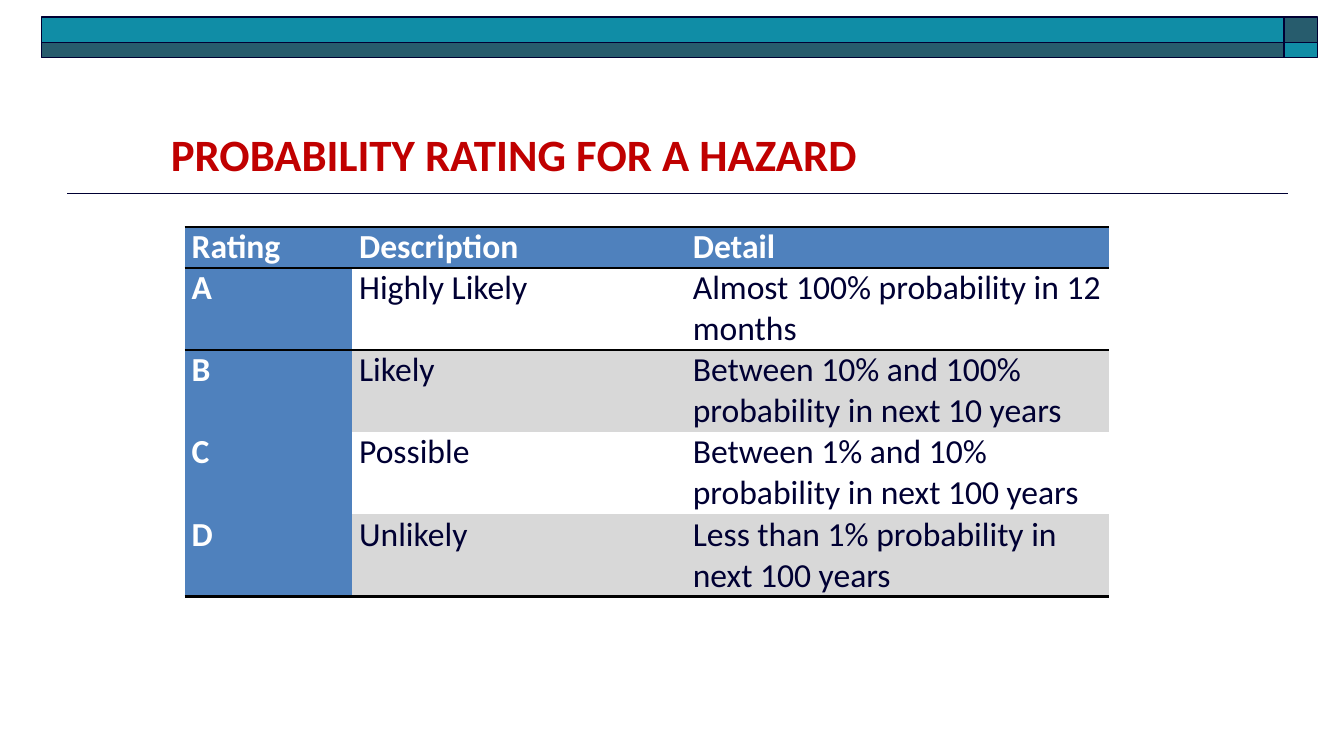
from lxml.etree import SubElement
from pptx import Presentation
from pptx.dml.color import RGBColor
from pptx.enum.shapes import MSO_CONNECTOR, MSO_SHAPE
from pptx.enum.text import MSO_ANCHOR, PP_ALIGN
from pptx.oxml.ns import qn
from pptx.util import Cm, Pt

NAVY = RGBColor(0x00, 0x00, 0x33)
TEAL = RGBColor(0x10, 0x8D, 0xA6)
DARK_TEAL = RGBColor(0x27, 0x5C, 0x6D)
RED = RGBColor(0xC0, 0x00, 0x00)
BLUE = RGBColor(0x4F, 0x81, 0xBD)
GREY = RGBColor(0xD8, 0xD8, 0xD8)
WHITE = RGBColor(0xFF, 0xFF, 0xFF)
BLACK = RGBColor(0x00, 0x00, 0x00)

FONT = "Calibri"
PLAIN_TABLE_STYLE = "{2D5ABB26-0587-4C30-8999-92F81FD0307C}"
RATINGS = [
    ("Rating", "Description", "Detail"),
    ("A", "Highly Likely", "Almost 100% probability in 12 months"),
    ("B", "Likely", "Between 10% and 100% probability in next 10 years"),
    ("C", "Possible", "Between 1% and 10% probability in next 100 years"),
    ("D", "Unlikely", "Less than 1% probability in next 100 years"),
]


def write_text(text_frame, text, size=24, color=NAVY, bold=False):
    paragraph = text_frame.paragraphs[0]
    paragraph.alignment = PP_ALIGN.LEFT
    run = paragraph.add_run()
    run.text = text
    run.font.name = FONT
    run.font.size = Pt(size)
    run.font.bold = bold
    run.font.color.rgb = color


def add_header_band(slide, left, top, width, height):
    """Draw two stacked bars whose colours swap in the narrow end column."""
    end_width, upper_height = Cm(0.84), Cm(0.64)
    columns = [(left, width - end_width), (left + width - end_width, end_width)]
    rows = [(top, upper_height), (top + upper_height, height - upper_height)]
    for row, (y, bar_height) in enumerate(rows):
        for column, (x, bar_width) in enumerate(columns):
            bar = slide.shapes.add_shape(MSO_SHAPE.RECTANGLE, x, y, bar_width, bar_height)
            bar.shadow.inherit = False
            bar.fill.solid()
            bar.fill.fore_color.rgb = TEAL if row == column else DARK_TEAL
            bar.line.color.rgb = NAVY
            bar.line.width = Pt(1)


def add_rule(slide, left, top, width):
    rule = slide.shapes.add_connector(MSO_CONNECTOR.STRAIGHT, left, top, left + width, top)
    rule.line.color.rgb = NAVY
    rule.line.width = Pt(1)
    SubElement(rule._element.spPr, qn("a:effectLst"))


def place_title(slide, text, left, top, width, height):
    title = slide.shapes.title
    title.left, title.top, title.width, title.height = left, top, width, height
    title.text_frame.word_wrap = True
    title.text_frame.vertical_anchor = MSO_ANCHOR.MIDDLE
    write_text(title.text_frame, text, size=32, color=RED, bold=True)


def add_border(cell, side, points):
    """Draw one cell edge; side is lnT or lnB, and comes before the fill."""
    properties = cell._tc.get_or_add_tcPr()
    border = SubElement(properties, qn(f"a:{side}"), w=str(Pt(points)))
    fill = SubElement(border, qn("a:solidFill"))
    SubElement(fill, qn("a:srgbClr"), val=str(BLACK))


def format_cell(cell, text, row, column):
    is_heading = row == 0 or column == 0
    cell.margin_left = cell.margin_right = Cm(0.18)
    cell.margin_top = cell.margin_bottom = 0
    write_text(cell.text_frame, text, color=WHITE if is_heading else NAVY, bold=is_heading)
    if row <= 1:
        add_border(cell, "lnT", 1)
    if row == 0:
        add_border(cell, "lnB", 1)
    if row == len(RATINGS) - 1:
        add_border(cell, "lnB", 2.25)
    if is_heading or row % 2 == 0:
        cell.fill.solid()
        cell.fill.fore_color.rgb = BLUE if is_heading else GREY
    else:
        cell.fill.background()


def add_rating_table(slide, left, top, width, height):
    frame = slide.shapes.add_table(len(RATINGS), len(RATINGS[0]), left, top, width, height)
    table = frame.table
    table.horz_banding = False
    table._tbl.tblPr.find(qn("a:tableStyleId")).text = PLAIN_TABLE_STYLE
    rating_width, description_width = Cm(4.22), Cm(8.41)
    widths = (rating_width, description_width, width - rating_width - description_width)
    for column, column_width in zip(table.columns, widths):
        column.width = column_width
    # The heading takes one line of text, every other row two.
    line_height = height // (2 * len(RATINGS) - 1)
    for row, texts in enumerate(RATINGS):
        table.rows[row].height = line_height if row == 0 else 2 * line_height
        for column, text in enumerate(texts):
            format_cell(table.cell(row, column), text, row, column)


def main():
    presentation = Presentation()
    presentation.slide_width = Cm(33.87)
    presentation.slide_height = Cm(19.05)
    slide = presentation.slides.add_slide(presentation.slide_layouts[5])
    add_rule(slide, Cm(1.7), Cm(4.88), Cm(30.76))
    add_header_band(slide, Cm(1.04), Cm(0.43), Cm(32.16), Cm(1.02))
    place_title(slide, "PROBABILITY RATING FOR A HAZARD", Cm(4.05), Cm(2.97), Cm(22.86), Cm(1.78))
    add_rating_table(slide, Cm(4.65), Cm(5.72), Cm(23.3), Cm(9.3))
    presentation.save("out.pptx")


if __name__ == "__main__":
    main()
